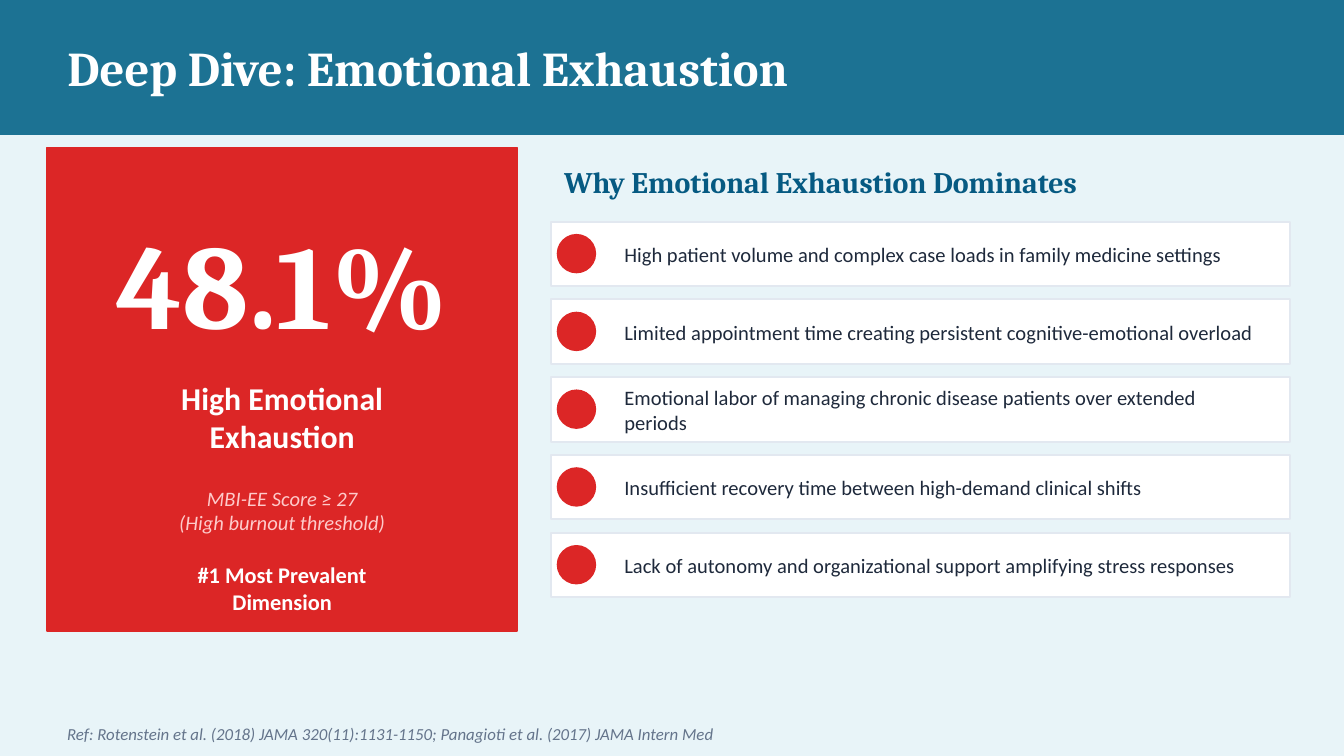
from pptx import Presentation
from pptx.dml.color import RGBColor
from pptx.enum.shapes import MSO_SHAPE
from pptx.enum.text import MSO_ANCHOR, MSO_AUTO_SIZE, PP_ALIGN
from pptx.util import Cm, Pt

RECTANGLE, OVAL = MSO_SHAPE.RECTANGLE, MSO_SHAPE.OVAL
LEFT, CENTER = PP_ALIGN.LEFT, PP_ALIGN.CENTER
MIDDLE = MSO_ANCHOR.MIDDLE
NO_AUTOFIT = MSO_AUTO_SIZE.NONE

BACKGROUND = RGBColor(0xE8, 0xF4, 0xF8)
TEAL = RGBColor(0x1C, 0x72, 0x93)
NAVY = RGBColor(0x06, 0x5A, 0x82)
RED = RGBColor(0xDC, 0x26, 0x26)
PINK = RGBColor(0xFE, 0xCA, 0xCA)
WHITE = RGBColor(0xFF, 0xFF, 0xFF)
BORDER = RGBColor(0xE2, 0xE8, 0xF0)
INK = RGBColor(0x1E, 0x29, 0x3B)
GRAY = RGBColor(0x64, 0x74, 0x8B)

HEADING_FONT = "Cambria"
BODY_FONT = "Calibri"

CAUSES = [
    "High patient volume and complex case loads in family medicine settings",
    "Limited appointment time creating persistent cognitive-emotional overload",
    "Emotional labor of managing chronic disease patients over extended periods",
    "Insufficient recovery time between high-demand clinical shifts",
    "Lack of autonomy and organizational support amplifying stress responses",
]


def write_text(frame, text, *, size, color, font=BODY_FONT, bold=False,
               italic=False, align=LEFT):
    """Fill a text frame, one paragraph for each line of text."""
    frame.word_wrap = True
    frame.auto_size = NO_AUTOFIT
    frame.vertical_anchor = MIDDLE
    frame.text = text
    for paragraph in frame.paragraphs:
        paragraph.alignment = align
        for run in paragraph.runs:
            run.font.name = font
            run.font.size = Pt(size)
            run.font.bold = bold
            run.font.italic = italic
            run.font.color.rgb = color


class SlideBuilder:
    """Holds the slide style and the current slide; lengths are in cm."""

    def __init__(self, presentation):
        self.slide = presentation.slides.add_slide(presentation.slide_layouts[5])
        background = self.slide.background.fill
        background.solid()
        background.fore_color.rgb = BACKGROUND

    def shape(self, kind, left, top, width, height, fill, line=None):
        shape = self.slide.shapes.add_shape(
            kind, Cm(left), Cm(top), Cm(width), Cm(height))
        shape.shadow.inherit = False
        shape.fill.solid()
        shape.fill.fore_color.rgb = fill
        shape.line.color.rgb = line or fill
        shape.line.width = Pt(1)

    def text(self, text, left, top, width, height, **style):
        box = self.slide.shapes.add_textbox(
            Cm(left), Cm(top), Cm(width), Cm(height))
        write_text(box.text_frame, text, **style)

    def title(self, text, left, top, width, height, **style):
        title = self.slide.shapes.title
        title.left, title.top = Cm(left), Cm(top)
        title.width, title.height = Cm(width), Cm(height)
        write_text(title.text_frame, text, **style)
        # Bring the title in front of the banner
        title.element.getparent().append(title.element)

    def card(self, text, left, top):
        self.shape(RECTANGLE, left, top, 13.97, 1.22, WHITE, BORDER)
        self.shape(OVAL, left + 0.13, top + 0.25, 0.71, 0.71, RED)
        self.text(text, left + 1.14, top + 0.13, 12.57, 0.97,
                  size=11, color=INK)


def main():
    presentation = Presentation()
    presentation.slide_width = Cm(25.4)
    presentation.slide_height = Cm(14.29)
    builder = SlideBuilder(presentation)

    # Banner and title
    builder.shape(RECTANGLE, 0, 0, 25.4, 2.54, TEAL)
    builder.title("Deep Dive: Emotional Exhaustion", 1.02, 0, 23.37, 2.54,
                  size=26, color=WHITE, font=HEADING_FONT, bold=True)

    # Key figure panel
    panel_left, panel_width = 0.89, 8.89
    builder.shape(RECTANGLE, panel_left, 2.79, panel_width, 9.14, RED)
    panel_texts = [
        ("48.1%", 3.81, 3.05,
         dict(size=64, color=WHITE, font=HEADING_FONT, bold=True)),
        ("High Emotional\nExhaustion", 6.99, 1.78,
         dict(size=17, color=WHITE, bold=True)),
        ("MBI-EE Score ≥ 27\n(High burnout threshold)", 8.89, 1.52,
         dict(size=11, color=PINK, italic=True)),
        ("#1 Most Prevalent\nDimension", 10.41, 1.4,
         dict(size=12, color=WHITE, bold=True)),
    ]
    for text, top, height, style in panel_texts:
        builder.text(text, panel_left, top, panel_width, height,
                     align=CENTER, **style)

    # Causes
    causes_left, first_top, step = 10.41, 4.19, 1.47
    builder.text("Why Emotional Exhaustion Dominates", causes_left, 2.92,
                 13.97, 1.02, size=16, color=NAVY, font=HEADING_FONT, bold=True)
    for index, cause in enumerate(CAUSES):
        builder.card(cause, causes_left, first_top + index * step)

    # Reference
    builder.text("Ref: Rotenstein et al. (2018) JAMA 320(11):1131-1150; "
                 "Panagioti et al. (2017) JAMA Intern Med",
                 1.02, 13.59, 23.37, 0.56, size=9, color=GRAY, italic=True)

    presentation.save("out.pptx")


if __name__ == "__main__":
    main()
